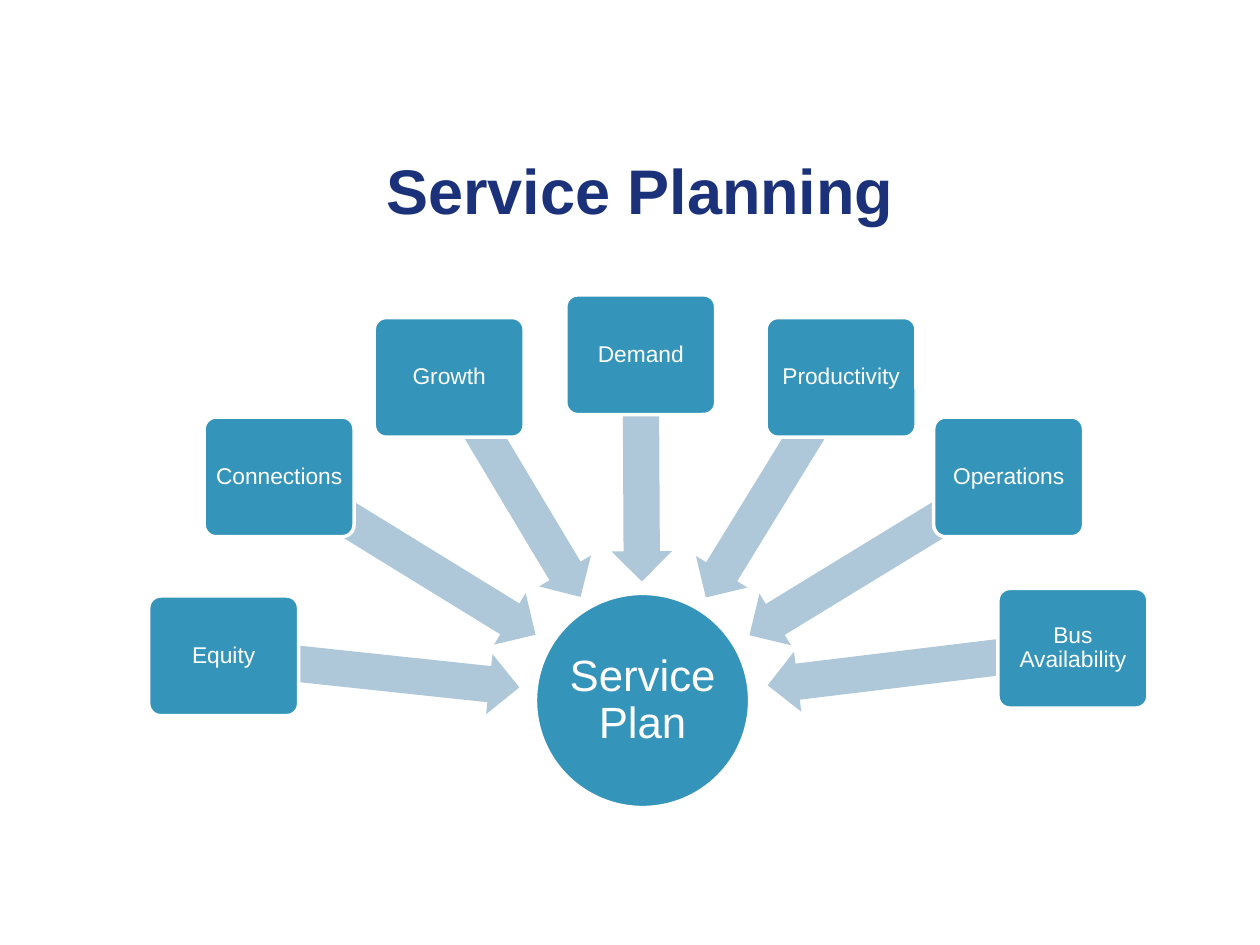
from math import atan2, cos, degrees, sin

from pptx import Presentation
from pptx.dml.color import RGBColor
from pptx.enum.shapes import MSO_SHAPE as Shape
from pptx.enum.text import MSO_ANCHOR as Anchor, PP_ALIGN as Align
from pptx.util import Inches, Pt

COLORS = {"title": "1B327A", "node": "3494BA", "arrow": "AEC8D9", "white": "FFFFFF"}
FONT = "Arial"

# Hub and factor geometry, in inches
HUB_X, HUB_Y, HUB_SIZE = 5.1, 5.56, 1.7
BOX_WIDTH, BOX_HEIGHT = 1.19, 0.95
ARROW_HEIGHT = 0.48

# Factor: label, box left, box top, arrow length
FACTORS = [
    ("Demand", 4.49, 2.34, 1.8),
    ("Bus Availability", 7.92, 4.67, 2.44),
    ("Operations", 7.41, 3.31, 2.41),
    ("Equity", 1.18, 4.73, 2.36),
    ("Growth", 2.97, 2.52, 2.03),
    ("Connections", 1.62, 3.31, 2.39),
    ("Productivity", 6.08, 2.52, 2.05),
]


def color(name):
    return RGBColor.from_string(COLORS[name])


def write_text(shape, text, size, color_name, inset, bold=False, spacing=None):
    frame = shape.text_frame
    frame.word_wrap = True
    frame.vertical_anchor = Anchor.MIDDLE
    frame.margin_left = frame.margin_right = Inches(inset)
    frame.margin_top = frame.margin_bottom = Inches(inset)
    para = frame.paragraphs[0]
    para.alignment = Align.CENTER
    if spacing:
        para.line_spacing = spacing
    span = para.add_run()
    span.text = text
    span.font.name = FONT
    span.font.size = Pt(size)
    span.font.bold = bold
    span.font.color.rgb = color(color_name)


def add_title(page, text):
    box = page.shapes.add_textbox(Inches(0.83), Inches(1), Inches(8.5), Inches(1))
    write_text(box, text, 36, "title", 0.05, bold=True)


def add_filled(page, kind, left, top, width, height, fill):
    shape = page.shapes.add_shape(
        kind, Inches(left), Inches(top), Inches(width), Inches(height))
    shape.shadow.inherit = False
    shape.fill.solid()
    shape.fill.fore_color.rgb = color(fill)
    return shape


def add_node(page, kind, left, top, width, height, text, size, inset):
    node = add_filled(page, kind, left, top, width, height, "node")
    node.line.color.rgb = color("white")
    node.line.width = Pt(2)
    write_text(node, text, size, "white", inset, spacing=0.9)
    return node


def add_arrow(page, box_x, box_y, length):
    """Arrow from the centre of a factor box towards the hub."""
    angle = atan2(box_y - HUB_Y, box_x - HUB_X)
    center_x = box_x - cos(angle) * length / 2
    center_y = box_y - sin(angle) * length / 2
    arrow = add_filled(page, Shape.LEFT_ARROW, center_x - length / 2,
                       center_y - ARROW_HEIGHT / 2, length, ARROW_HEIGHT, "arrow")
    arrow.line.fill.background()
    arrow.adjustments[0] = 0.6
    arrow.adjustments[1] = 0.5
    arrow.rotation = degrees(angle) % 360


def add_factor(page, label, left, top, arrow_length):
    add_arrow(page, left + BOX_WIDTH / 2, top + BOX_HEIGHT / 2, arrow_length)
    box = add_node(page, Shape.ROUNDED_RECTANGLE, left, top, BOX_WIDTH, BOX_HEIGHT,
                   label, 13, 0.03)
    box.adjustments[0] = 0.1


def main():
    deck = Presentation()
    deck.slide_width, deck.slide_height = Inches(10), Inches(7.5)
    page = deck.slides.add_slide(deck.slide_layouts[6])

    # Title
    add_title(page, "Service Planning")

    # Hub
    add_node(page, Shape.OVAL, HUB_X - HUB_SIZE / 2, HUB_Y - HUB_SIZE / 2,
             HUB_SIZE, HUB_SIZE, "Service Plan", 25, 0.02)

    # Factors around the hub
    for factor in FACTORS:
        add_factor(page, *factor)

    deck.save("out.pptx")


if __name__ == "__main__":
    main()
